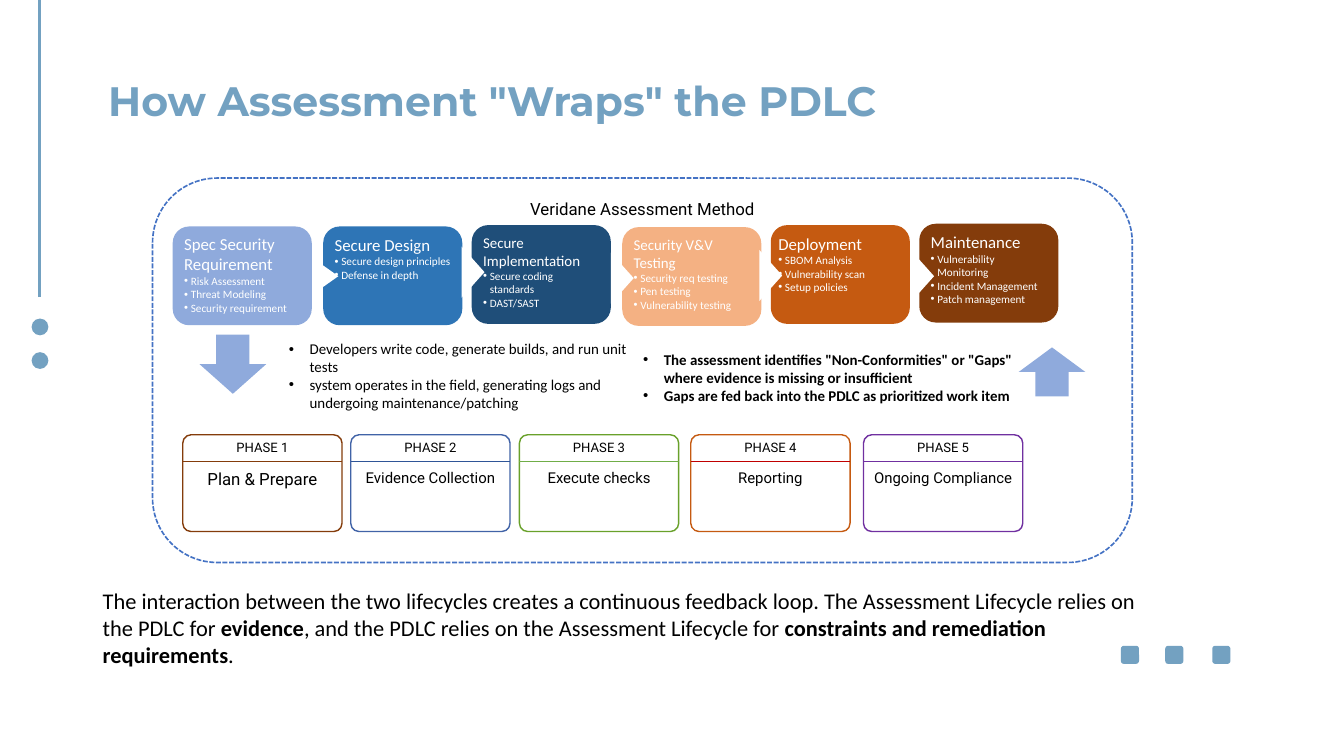
from dataclasses import dataclass
from typing import NamedTuple

from lxml.etree import SubElement
from pptx import Presentation
from pptx.dml.color import RGBColor
from pptx.enum.dml import MSO_LINE
from pptx.enum.shapes import MSO_CONNECTOR, MSO_SHAPE
from pptx.enum.text import MSO_ANCHOR, MSO_AUTO_SIZE, PP_ALIGN
from pptx.oxml.ns import qn
from pptx.util import Inches, Pt


@dataclass(frozen=True)
class Theme:
    accent: str = "73A1C1"
    frame: str = "4472C4"
    soft_blue: str = "8FAADC"
    white: str = "FFFFFF"
    black: str = "000000"
    heading_font: str = "Montserrat"
    label_font: str = "Roboto"
    body_font: str = "Calibri"
    title: int = 44
    summary: int = 24
    large: int = 18
    medium: int = 16
    phase: int = 14
    small: int = 12


THEME = Theme()


class Box(NamedTuple):
    left: float
    top: float
    width: float
    height: float


class Stage(NamedTuple):
    left: float
    top: float
    color: str
    heading: str
    size: int
    points: tuple[str, ...]
    side_inset: float = 0.1
    top_inset: float = 0.05


class Phase(NamedTuple):
    left: float
    border: str
    rule: str
    name: str
    size: int


class Notes(NamedTuple):
    box: Box
    points: tuple[str, ...]
    bold: bool


STAGES = (
    Stage(2.57, 3.37, THEME.soft_blue, "Spec Security Requirement", THEME.large,
          ("Risk Assessment", "Threat Modeling", "Security requirement"), top_inset=0.04),
    Stage(4.81, 3.37, "2E75B6", "Secure Design", THEME.large,
          ("Secure design principles", "Defense in depth")),
    Stage(7.02, 3.35, "1F4E79", "Secure Implementation", THEME.medium,
          ("Secure coding standards", "DAST/SAST")),
    Stage(9.26, 3.38, "F4B183", "Security V&V Testing", THEME.medium,
          ("Security req testing", "Pen testing", "Vulnerability testing")),
    Stage(11.47, 3.35, "C55A11", "Deployment", THEME.large,
          ("SBOM Analysis", "Vulnerability scan", "Setup policies"), side_inset=0.04),
    Stage(13.68, 3.33, "843C0B", "Maintenance", THEME.large,
          ("Vulnerability Monitoring", "Incident Management", "Patch management")),
)
FIRST_NOTCH = Box(4.36, 3.83, 0.79, 0.56)
NOTCHES = tuple(Box(left, top, 0.76, 0.34) for left, top in
                ((6.66, 3.88), (8.88, 3.97), (11.09, 3.93), (13.35, 3.94)))
PHASES = (
    Phase(2.72, "843C0B", "843C0B", "Plan & Prepare", THEME.large),
    Phase(5.22, "4163A7", "2F5597", "Evidence Collection", THEME.medium),
    Phase(7.73, "69A12B", "70AD47", "Execute checks", THEME.medium),
    Phase(10.28, "C55A11", "C00000", "Reporting", THEME.medium),
    Phase(12.85, "7030A0", "7030A0", "Ongoing Compliance", THEME.medium),
)
NOTES = (
    Notes(Box(9.47, 5.17, 6.05, 0.91),
          ('The assessment identifies "Non-Conformities" or "Gaps" where evidence is missing or insufficient',
           "Gaps are fed back into the PDLC as prioritized work item"), True),
    Notes(Box(4.2, 5.01, 5.64, 1.18),
          ("Developers write code, generate builds, and run unit tests",
           "system operates in the field, generating logs and undergoing maintenance/patching"), False),
)
SUMMARY = (
    ("The interaction between the two lifecycles creates a continuous feedback loop. "
     "The Assessment Lifecycle relies on the PDLC for ", False),
    ("evidence", True),
    (", and the PDLC relies on the Assessment Lifecycle for ", False),
    ("constraints and remediation requirements", True),
    (".", False),
)


def style_run(run, size: int, color: str, font: str, bold: bool = False) -> None:
    run.font.size = Pt(size)
    run.font.color.rgb = RGBColor.from_string(color)
    run.font.name = font
    run.font.bold = bold


def write(paragraph, text: str, size: int, color: str, font: str, bold: bool = False) -> None:
    paragraph.text = text
    style_run(paragraph.runs[0], size, color, font, bold)


def add_bullet(paragraph, indent: float) -> None:
    properties = paragraph._p.get_or_add_pPr()
    properties.set("marL", str(Inches(indent)))
    properties.set("indent", str(-Inches(indent)))
    SubElement(properties, qn("a:buFont")).set("typeface", "Arial")
    SubElement(properties, qn("a:buChar")).set("char", "•")


def add_shape(slide, kind, box: Box, fill: str | None = None, line: str | None = None,
              weight: float = 1, rotation: float = 0):
    shape = slide.shapes.add_shape(kind, *map(Inches, box))
    shape.shadow.inherit = False
    shape.rotation = rotation
    if fill:
        shape.fill.solid()
        shape.fill.fore_color.rgb = RGBColor.from_string(fill)
    else:
        shape.fill.background()
    if line:
        shape.line.color.rgb = RGBColor.from_string(line)
        shape.line.width = Pt(weight)
    else:
        shape.line.fill.background()
    return shape


def set_frame(shape, side: float, top: float = 0.05):
    frame = shape.text_frame
    frame.word_wrap = True
    frame.vertical_anchor = MSO_ANCHOR.TOP
    frame.margin_left = frame.margin_right = Inches(side)
    frame.margin_top, frame.margin_bottom = Inches(top), Inches(0.05)
    return frame


def add_text_box(slide, box: Box):
    frame = set_frame(slide.shapes.add_textbox(*map(Inches, box)), 0.1)
    frame.auto_size = MSO_AUTO_SIZE.SHAPE_TO_FIT_TEXT
    return frame


def add_line(slide, x1: float, y1: float, x2: float, y2: float, color: str, weight: float) -> None:
    line = slide.shapes.add_connector(MSO_CONNECTOR.STRAIGHT, *map(Inches, (x1, y1, x2, y2)))
    line.line.color.rgb = RGBColor.from_string(color)
    line.line.width = Pt(weight)
    SubElement(line._element.spPr, qn("a:effectLst"))


def write_label(paragraph, text: str, size: int) -> None:
    paragraph.alignment = PP_ALIGN.CENTER
    paragraph.line_spacing = 0.95
    write(paragraph, text, size, THEME.black, THEME.label_font)


def draw_stage(slide, stage: Stage) -> None:
    card = add_shape(slide, MSO_SHAPE.ROUNDED_RECTANGLE, Box(stage.left, stage.top, 2.07, 1.47), stage.color)
    frame = set_frame(card, stage.side_inset, stage.top_inset)
    write(frame.paragraphs[0], stage.heading, stage.size, THEME.white, THEME.body_font)
    frame.paragraphs[0].alignment = PP_ALIGN.LEFT
    for point in stage.points:
        paragraph = frame.add_paragraph()
        paragraph.alignment = PP_ALIGN.LEFT
        add_bullet(paragraph, 0.1)
        write(paragraph, point, THEME.small, THEME.white, THEME.body_font)


def draw_notch(slide, box: Box) -> None:
    add_shape(slide, MSO_SHAPE.FLOWCHART_EXTRACT, box, THEME.white, rotation=90)


def draw_phase(slide, number: int, phase: Phase) -> None:
    card = add_shape(slide, MSO_SHAPE.ROUNDED_RECTANGLE, Box(phase.left, 6.47, 2.37, 1.44),
                     line=phase.border, weight=1.5)
    card.adjustments[0] = 0.086
    frame = set_frame(card, 0)
    write_label(frame.paragraphs[0], f"PHASE {number}", THEME.phase)
    name = frame.add_paragraph()
    name.space_before = Pt(16)
    write_label(name, phase.name, phase.size)
    add_line(slide, phase.left, 6.86, phase.left + 2.37, 6.86, phase.rule, 1)


def draw_notes(slide, notes: Notes) -> None:
    frame = add_text_box(slide, notes.box)
    for index, point in enumerate(notes.points):
        paragraph = frame.add_paragraph() if index else frame.paragraphs[0]
        add_bullet(paragraph, 0.31)
        write(paragraph, point, THEME.medium, THEME.black, THEME.body_font, notes.bold)


def main() -> None:
    deck = Presentation()
    deck.slide_width, deck.slide_height = Inches(20), Inches(11.25)
    slide = deck.slides.add_slide(deck.slide_layouts[6])

    title = add_text_box(slide, Box(1.51, 1.07, 17.49, 0.84))
    write(title.paragraphs[0], 'How Assessment "Wraps" the PDLC', THEME.title,
          THEME.accent, THEME.heading_font, True)
    add_line(slide, 0.59, 4.42, 0.59, 0, THEME.accent, 3)
    for top in (4.74, 5.24):
        add_shape(slide, MSO_SHAPE.OVAL, Box(0.47, top, 0.25, 0.25), THEME.accent)

    method = add_shape(slide, MSO_SHAPE.ROUNDED_RECTANGLE, Box(2.27, 2.65, 14.58, 5.72),
                       line=THEME.frame, weight=1.75)
    method.adjustments[0] = 0.168
    method.line.dash_style = MSO_LINE.SQUARE_DOT
    write_label(set_frame(method, 0).paragraphs[0], "Veridane Assessment Method", THEME.large)

    for number, phase in enumerate(PHASES, 1):
        draw_phase(slide, number, phase)

    summary = add_text_box(slide, Box(1.43, 8.69, 15.65, 1.31)).paragraphs[0]
    for text, bold in SUMMARY:
        run = summary.add_run()
        run.text = text
        style_run(run, THEME.summary, THEME.black, THEME.body_font, bold)

    for stage in STAGES[1:]:
        draw_stage(slide, stage)
    draw_notch(slide, FIRST_NOTCH)
    draw_stage(slide, STAGES[0])
    for notch in NOTCHES:
        draw_notch(slide, notch)

    add_shape(slide, MSO_SHAPE.DOWN_ARROW, Box(2.97, 4.98, 0.99, 0.88), THEME.soft_blue)
    add_shape(slide, MSO_SHAPE.UP_ARROW, Box(15.16, 5.17, 0.99, 0.73), THEME.soft_blue)
    for notes in NOTES:
        draw_notes(slide, notes)
    for left in (18.04, 17.34, 16.68):
        add_shape(slide, MSO_SHAPE.ROUNDED_RECTANGLE, Box(left, 9.61, 0.27, 0.27), THEME.accent)

    deck.save("out.pptx")


if __name__ == "__main__":
    main()
